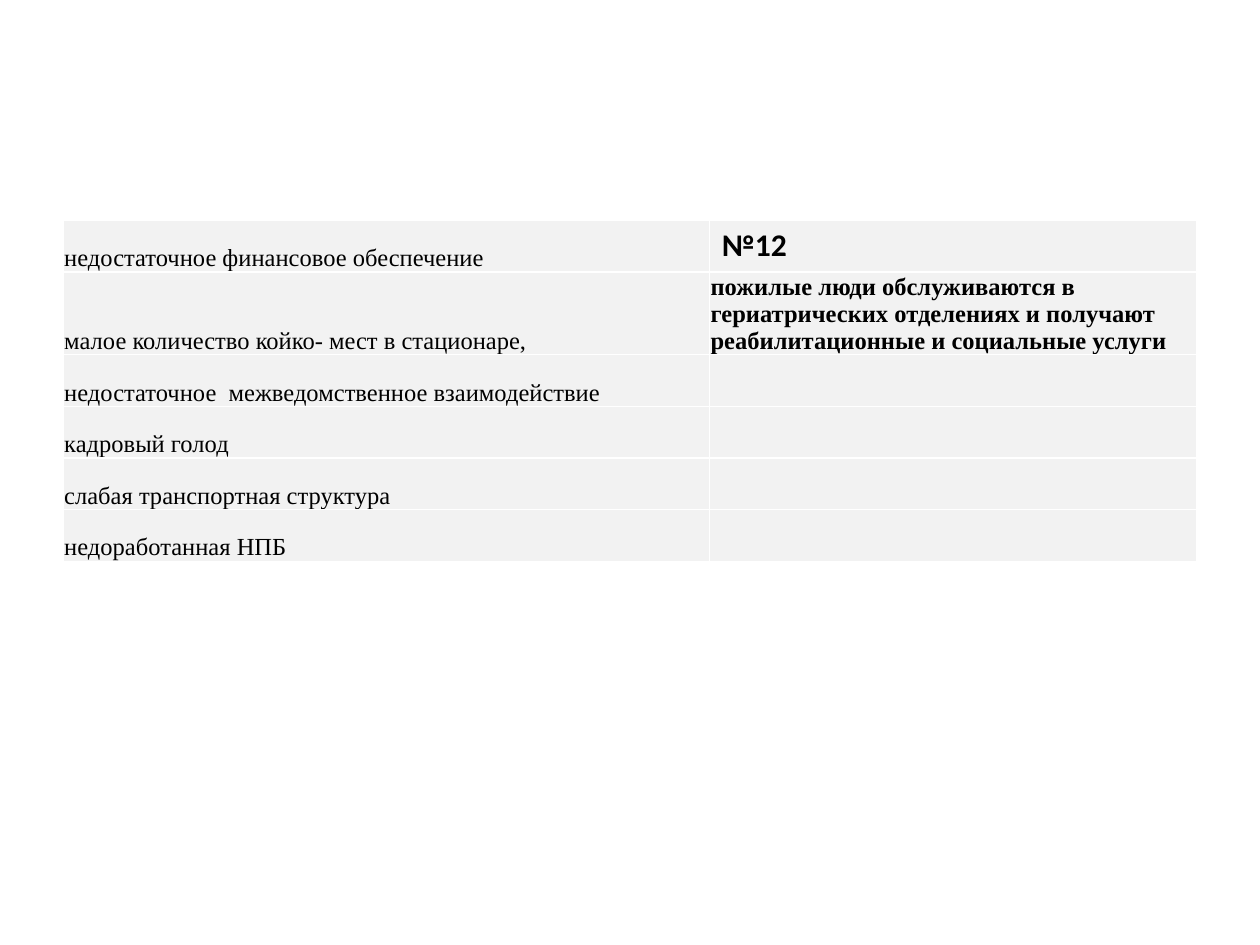
from pptx import Presentation
from pptx.dml.color import RGBColor
from pptx.enum.text import MSO_ANCHOR
from pptx.util import Inches, Pt

PROBLEMS = [
    "недостаточное финансовое обеспечение",
    "малое количество койко- мест в стационаре,",
    "недостаточное  межведомственное взаимодействие",
    "кадровый голод",
    "слабая транспортная структура",
    "недоработанная НПБ",
]
NUMBER = "№12"
RESULT = ("пожилые люди обслуживаются в гериатрических отделениях "
          "и получают реабилитационные и социальные услуги")

SLIDE_WIDTH, SLIDE_HEIGHT = 10, 7.5
TABLE_LEFT, TABLE_TOP = 0.5, 1.75
COLUMN_SHARES = [0.57, 0.43]
ROW_HEIGHT = 0.41

TIGHT = {"margin_left": Inches(0.01), "margin_right": Inches(0.01),
         "margin_top": Inches(0.01), "margin_bottom": 0}
BOTTOM = {**TIGHT, "vertical_anchor": MSO_ANCHOR.BOTTOM}
MIDDLE = {**TIGHT, "vertical_anchor": MSO_ANCHOR.MIDDLE}
PLAIN = {"name": "Times New Roman", "size": Pt(14), "bold": False}
STRONG = {**PLAIN, "bold": True}
HEADING = {"name": "Calibri", "size": Pt(18), "bold": True}


def color(value):
    return RGBColor.from_string(value)


def apply(target, values):
    for name, value in values.items():
        setattr(target, name, value)


def write(cell, text, cell_format, font_format):
    apply(cell, cell_format)
    span = cell.text_frame.paragraphs[0].add_run()
    span.text = text
    apply(span.font, font_format)
    span.font.color.rgb = color("000000")


def main():
    deck = Presentation()
    deck.slide_width, deck.slide_height = Inches(SLIDE_WIDTH), Inches(SLIDE_HEIGHT)
    page = deck.slides.add_slide(deck.slide_layouts[6])

    width = SLIDE_WIDTH - 2 * TABLE_LEFT
    rows = len(PROBLEMS)
    table = page.shapes.add_table(
        rows, len(COLUMN_SHARES), Inches(TABLE_LEFT), Inches(TABLE_TOP),
        Inches(width), Inches(ROW_HEIGHT * rows)).table
    for column, share in zip(table.columns, COLUMN_SHARES):
        column.width = Inches(width * share)
    for cell in table.iter_cells():
        cell.fill.solid()
        cell.fill.fore_color.rgb = color("F2F2F2")

    for row, problem in enumerate(PROBLEMS):
        write(table.cell(row, 0), problem, BOTTOM, PLAIN)
    write(table.cell(0, 1), NUMBER, {}, HEADING)
    write(table.cell(1, 1), RESULT, MIDDLE, STRONG)

    deck.save("out.pptx")


if __name__ == "__main__":
    main()
